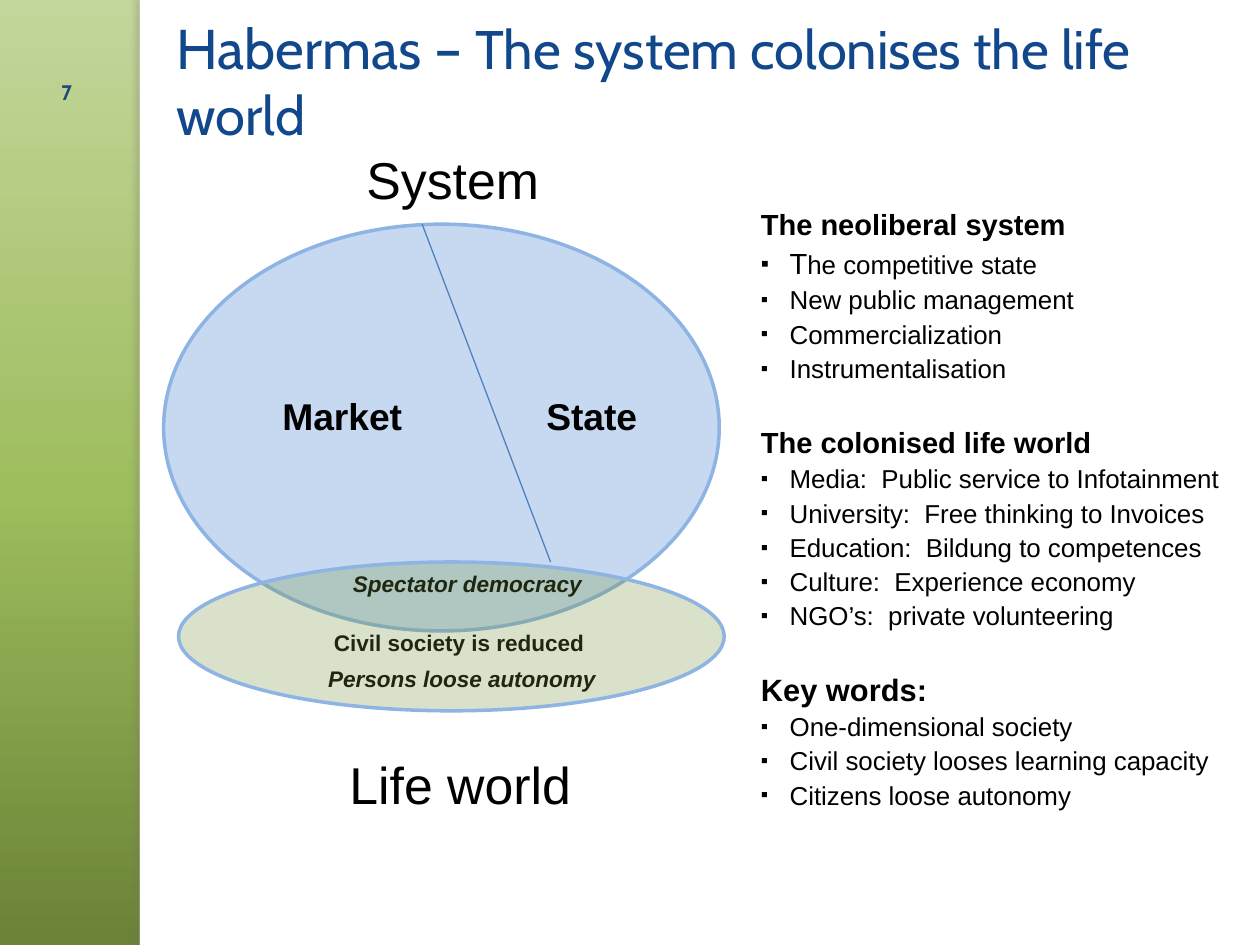
from copy import deepcopy

from lxml.etree import SubElement
from pptx import Presentation
from pptx.dml.color import RGBColor
from pptx.enum.shapes import MSO_CONNECTOR, MSO_SHAPE as SHAPE
from pptx.enum.text import MSO_ANCHOR as ANCHOR, PP_ALIGN as ALIGN
from pptx.oxml.ns import qn
from pptx.util import Cm, Pt

COLORS = {
    "white": "FFFFFF", "black": "000000", "title": "11478B", "number": "1F497D",
    "system": "C6D9F1", "life": "77933C", "outline": "8EB4E3",
    "divider": "4F81BD", "shadow": "77756F",
    "dark": "6A8336", "mid": "9EBD5E", "light": "C3D69B",
}


def add_shape(kind, left, top, width, height, fill, outline=None):
    shape = page.shapes.add_shape(kind, Cm(left), Cm(top), Cm(width), Cm(height))
    shape.shadow.inherit = False
    shape.fill.solid()
    shape.fill.fore_color.rgb = RGBColor.from_string(COLORS[fill])
    if outline:
        shape.line.color.rgb = RGBColor.from_string(COLORS[outline])
        shape.line.width = Pt(2)
    else:
        shape.line.fill.background()
    return shape


def add_text(lines, left, top, width, height, size, color="black", font="Arial",
             bold=False, italic=False, align=ALIGN.CENTER, anchor=ANCHOR.MIDDLE):
    box = page.shapes.add_textbox(Cm(left), Cm(top), Cm(width), Cm(height))
    frame = box.text_frame
    frame.word_wrap = True
    frame.vertical_anchor = anchor
    frame.margin_left = frame.margin_right = frame.margin_top = frame.margin_bottom = 0
    frame.text = "\n".join(lines)
    for para in frame.paragraphs:
        para.alignment = align
        for span in para.runs:
            span.font.name, span.font.size = font, Pt(size)
            span.font.bold, span.font.italic = bold, italic
            span.font.color.rgb = RGBColor.from_string(COLORS[color])
    return frame


deck = Presentation()
deck.slide_width, deck.slide_height = Cm(25.4), Cm(19.05)
page = deck.slides.add_slide(deck.slide_layouts[6])

# Green background, dark at the bottom
fill = page.background.fill
fill.gradient()
fill.gradient_angle = 90
stop_list = page.element.find(".//" + qn("a:gsLst"))
stop_list.append(deepcopy(stop_list[0]))
for stop, (position, name) in zip(fill.gradient_stops,
                                  [(0, "dark"), (0.48, "mid"), (1, "light")]):
    stop.position = position
    stop.color.rgb = RGBColor.from_string(COLORS[name])

# White panel and its edge, which casts a shadow to the left
add_shape(SHAPE.RECTANGLE, 2.82, 0, 22.58, 19.05, "white")
edge = add_shape(SHAPE.RECTANGLE, 2.82, 0, 0.2, 19.05, "white")
effects = edge.element.spPr.find(qn("a:effectLst"))
shadow = SubElement(effects, qn("a:outerShdw"), blurRad=str(Pt(3)), dist=str(Pt(3)),
                    dir="10800000", algn="r", rotWithShape="0")
tint = SubElement(shadow, qn("a:srgbClr"), val=COLORS["shadow"])
SubElement(tint, qn("a:alpha"), val="25000")

# System ellipse
add_shape(SHAPE.OVAL, 3.3, 4.52, 11.2, 8.2, "system", "outline")

# Diagram labels: text, centre x, centre y, size, bold, italic
labels = [
    ("System", 9.13, 3.6, 29.6, False, False),
    ("Market", 6.9, 8.37, 21.3, True, False),
    ("State", 11.93, 8.37, 21.3, True, False),
    ("Spectator democracy", 9.42, 11.77, 12.9, True, True),
    ("Civil society is reduced", 9.25, 12.96, 12.9, True, False),
    ("Persons loose autonomy", 9.31, 13.68, 12.9, True, True),
    ("Life world", 9.28, 15.8, 29.6, False, False),
]
for text, x, y, size, bold, italic in labels:
    add_text([text], x - 3.5, y - 0.6, 7, 1.2, size, bold=bold, italic=italic)

# Title
title = add_text(["Habermas – "], 3.56, 0.74, 21.58, 1.75, 32, "title", "Cabin",
                 align=ALIGN.LEFT)
para = title.paragraphs[0]
span = para.add_run()
span.text = "The system colonises the life world"
span.font.name, span.font.size = "Cabin", Pt(31)
span.font.color.rgb = RGBColor.from_string(COLORS["title"])

# Headings with their bullet lists
sections = [
    ("The neoliberal system", 16.6, [
        "The competitive state", "New public management",
        "Commercialization", "Instrumentalisation"]),
    ("The colonised life world", 16.6, [
        "Media:  Public service to Infotainment",
        "University:  Free thinking to Invoices",
        "Education:  Bildung to competences",
        "Culture:  Experience economy", "NGO’s:  private volunteering"]),
    ("Key words:", 17.6, [
        "One-dimensional society", "Civil society looses learning capacity",
        "Citizens loose autonomy"]),
]
heading_sizes = {heading: size for heading, size, items in sections}
lines = [line for heading, size, items in sections for line in [heading, *items]]
outline = add_text(lines, 15.34, 4.17, 9.9, 12.4, 14.8,
                   align=ALIGN.LEFT, anchor=ANCHOR.TOP)
for index, para in enumerate(outline.paragraphs):
    para.line_spacing = Pt(19.6)
    if para.text in heading_sizes:
        para.space_before = Pt(24 if index else 0)
        para.runs[0].font.size = Pt(heading_sizes[para.text])
        para.runs[0].font.bold = True
        continue
    para.space_before = Pt(3 if index == 1 else 0)
    props = para._p.get_or_add_pPr()
    props.set("marL", str(Cm(0.58)))
    props.set("indent", str(Cm(-0.58)))
    SubElement(props, qn("a:buSzPct"), val="80000")
    SubElement(props, qn("a:buFont"), typeface="Arial")
    SubElement(props, qn("a:buChar"), char="▪")

# The first bullet opens with a larger letter
para = outline.paragraphs[1]
rest = deepcopy(para.runs[0]._r)
para._p.append(rest)
para.runs[0].text, para.runs[1].text = "T", "he competitive state"
para.runs[0].font.size = Pt(16.6)

# Line between market and state
divider = page.shapes.add_connector(MSO_CONNECTOR.STRAIGHT,
                                    Cm(8.51), Cm(4.52), Cm(11.1), Cm(11.33))
divider.line.color.rgb = RGBColor.from_string(COLORS["divider"])
divider.line.width = Pt(0.75)
SubElement(divider.element.spPr, qn("a:effectLst"))

# Slide number
add_text(["7"], 0.71, 0.91, 1.27, 1.2, 12, "number", "Cabin", bold=True,
         anchor=ANCHOR.BOTTOM)

# Translucent life world ellipse over the labels
life = add_shape(SHAPE.OVAL, 3.6, 11.33, 11, 3, "life", "outline")
SubElement(life.element.spPr.find(qn("a:solidFill"))[0], qn("a:alpha"), val="27000")

deck.save("out.pptx")
